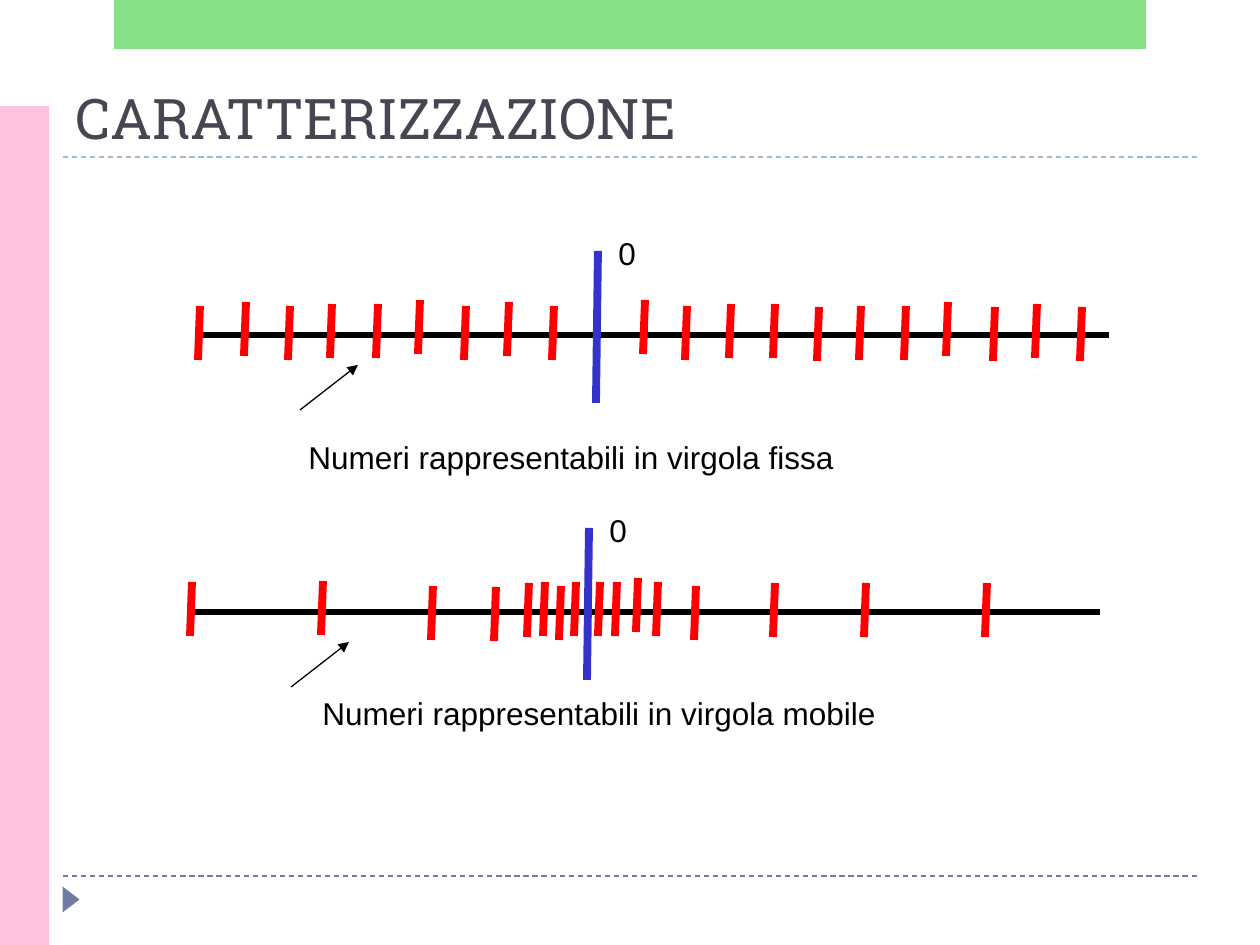
import pptx
import pptx.util
import pptx.dml.color
import pptx.enum.dml
import pptx.enum.shapes
import pptx.enum.text
import pptx.oxml
import pptx.oxml.ns

PX_PER_INCH = 126
TICK_LEAN, TICK_HEIGHT = -2, 54
NO_MARGIN_CHANGE = {"word_wrap": True, "auto_size": pptx.enum.text.MSO_AUTO_SIZE.NONE}
TITLE_FRAME = {**NO_MARGIN_CHANGE, "vertical_anchor": pptx.enum.text.MSO_ANCHOR.BOTTOM}

FIXED_POINT_TICKS = [
    (200, 306), (246, 302), (290, 306), (332, 304), (378, 304), (420, 300), (466, 306),
    (509, 302), (554, 306), (645, 300), (687, 306), (731, 304), (775, 304), (819, 307),
    (861, 306), (906, 306), (948, 302), (995, 307), (1037, 304), (1082, 307),
]
FLOATING_POINT_TICKS = [
    (192, 582), (323, 581), (433, 586), (496, 587), (529, 583), (545, 582), (561, 586),
    (576, 582), (600, 582), (617, 582), (638, 578), (658, 582), (696, 586), (775, 583),
    (866, 583), (987, 583),
]


def px(length):
    return pptx.util.Emu(round(length * 914400 / PX_PER_INCH))


def color(hex_value):
    return pptx.dml.color.RGBColor.from_string(hex_value)


def set_attributes(target, values):
    for name, value in values.items():
        setattr(target, name, value)


def add_xml(parent, tag, **attributes):
    element = pptx.oxml.parse_xml(f"<a:{tag} {pptx.oxml.ns.nsdecls('a')}/>")
    for name, value in attributes.items():
        element.set(name, value)
    parent.append(element)


def add_line(slide, start, end, hex_value, width, dash=None, arrow=False):
    connector = slide.shapes.add_connector(
        pptx.enum.shapes.MSO_CONNECTOR.STRAIGHT, *map(px, (*start, *end)))
    connector.line.color.rgb = color(hex_value)
    set_attributes(connector.line, {"width": pptx.util.Pt(width), "dash_style": dash})
    if arrow:
        add_xml(connector.line._get_or_add_ln(), "tailEnd", type="triangle")
    add_xml(connector._element.spPr, "effectLst")


def add_block(slide, kind, box, hex_value, rotation=0, alpha=None):
    shape = slide.shapes.add_shape(kind, *map(px, box))
    shape.shadow.inherit = False
    shape.rotation = rotation
    shape.fill.solid()
    shape.fill.fore_color.rgb = color(hex_value)
    shape.line.fill.background()
    if alpha:
        fill_color = shape._element.spPr.find(".//" + pptx.oxml.ns.qn("a:srgbClr"))
        add_xml(fill_color, "alpha", val=str(alpha * 1000))


def write_text(shape, text, frame_format, font_name, size, hex_value):
    set_attributes(shape.text_frame, frame_format)
    paragraph = shape.text_frame.paragraphs[0]
    paragraph.alignment = pptx.enum.text.PP_ALIGN.LEFT
    run = paragraph.add_run()
    run.text = text
    set_attributes(run.font, {"name": font_name, "size": pptx.util.Pt(size)})
    run.font.color.rgb = color(hex_value)


def add_label(slide, text, box):
    label = slide.shapes.add_textbox(*map(px, box))
    write_text(label, text, NO_MARGIN_CHANGE, "Arial", 18, "000000")


def add_title(slide, text):
    title = slide.shapes.title
    box = {"left": 63, "top": 69, "width": 1134, "height": 88}
    set_attributes(title, {name: px(length) for name, length in box.items()})
    write_text(title, text, TITLE_FRAME, "Roboto Slab", 32, "464653")


def add_decoration(slide):
    dash = pptx.enum.dml.MSO_LINE.DASH
    kinds = pptx.enum.shapes.MSO_SHAPE
    for y, hex_value in ((876, "727CA3"), (157, "9FB8CD")):
        add_line(slide, (63, y), (1197, y), hex_value, 0.75, dash)
    add_block(slide, kinds.ISOSCELES_TRIANGLE, (58, 891, 26, 17), "727CA3", rotation=90)
    add_block(slide, kinds.RECTANGLE, (0, 106, 49, 839), "FFC1E0")
    add_block(slide, kinds.RECTANGLE, (114, 0, 1032, 49), "62D862", alpha=76)


def add_number_line(slide, left, axis_y, ticks, caption, caption_box):
    add_line(slide, (left, axis_y), (left + 910, axis_y), "000000", 3)
    for x, y in ticks:
        add_line(slide, (x, y), (x + TICK_LEAN, y + TICK_HEIGHT), "FF0000", 4.5)
    add_line(slide, (left + 399, axis_y - 84), (left + 397, axis_y + 68), "3333CC", 4.5)
    add_label(slide, "0", (left + 407, axis_y - 107, 44, 50))
    add_line(slide, (left + 101, axis_y + 75), (left + 159, axis_y + 30),
             "000000", 0.75, arrow=True)
    add_label(slide, caption, caption_box)


def main():
    presentation = pptx.Presentation()
    set_attributes(presentation, {"slide_width": px(1260), "slide_height": px(945)})
    slide = presentation.slides.add_slide(presentation.slide_layouts[5])
    slide.background.fill.solid()
    slide.background.fill.fore_color.rgb = color("FFFFFF")
    add_decoration(slide)
    add_title(slide, "CARATTERIZZAZIONE")
    add_number_line(slide, 199, 335, FIXED_POINT_TICKS,
                    "Numeri rappresentabili in virgola fissa", (296, 432, 759, 50))
    add_number_line(slide, 190, 612, FLOATING_POINT_TICKS,
                    "Numeri rappresentabili in virgola mobile", (310, 688, 777, 50))
    presentation.save("out.pptx")


if __name__ == "__main__":
    main()
